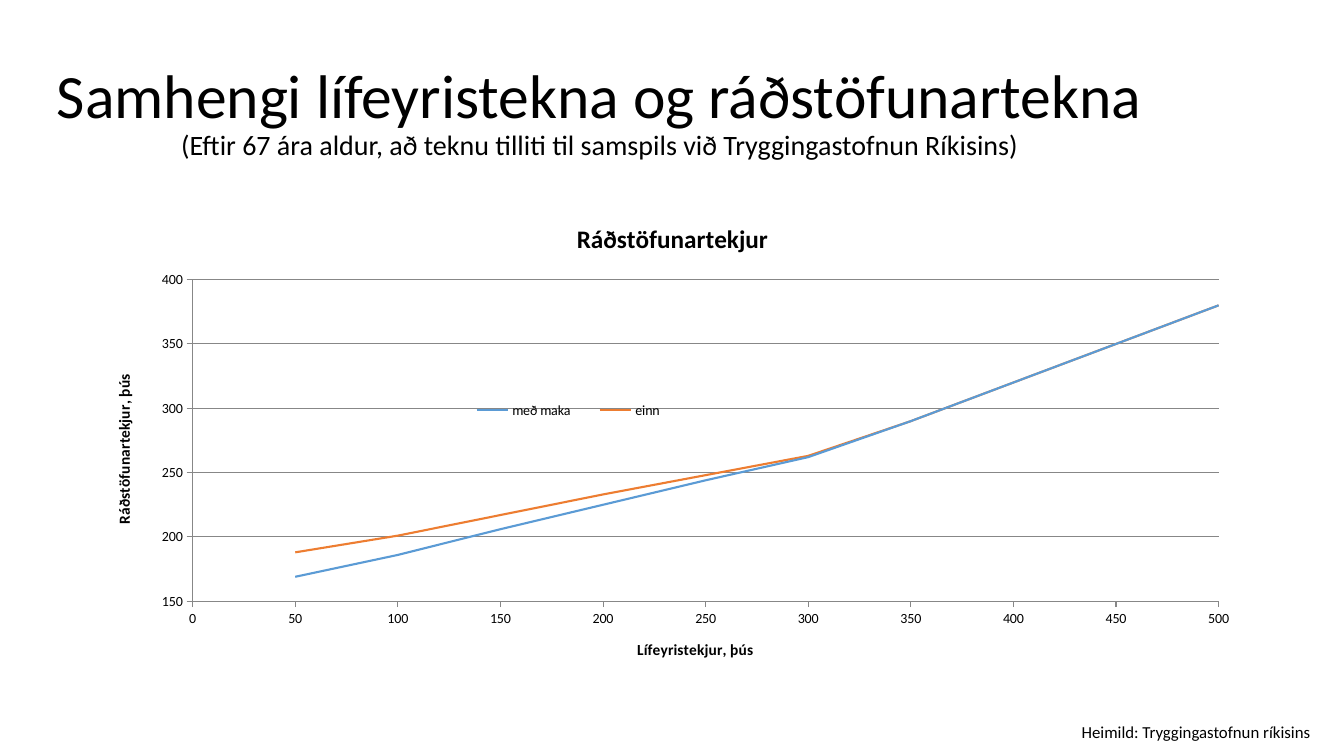
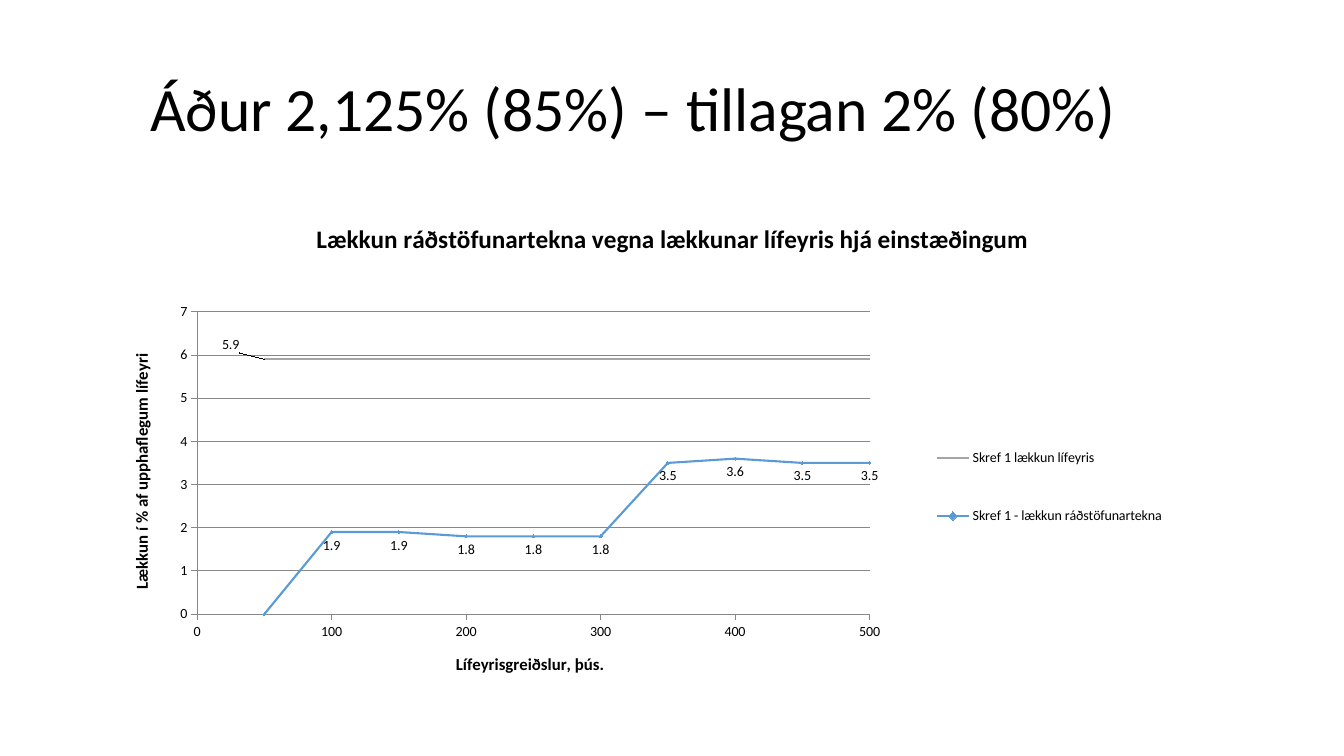
import dataclasses
import typing

import pptx
import pptx.chart.data
import pptx.chart.datalabel
import pptx.dml.color
import pptx.enum.chart
import pptx.enum.text
import pptx.oxml
import pptx.oxml.ns
import pptx.util

Inches, Pt = pptx.util.Inches, pptx.util.Pt
ink = pptx.dml.color.RGBColor.from_string
Legend = pptx.enum.chart.XL_LEGEND_POSITION
Label = pptx.enum.chart.XL_LABEL_POSITION
Mark = pptx.enum.chart.XL_MARKER_STYLE

# Shared style
FACE = "Calibri"
HEX = {"text": "000000", "grid": "878787", "blue": "5B9BD5",
       "orange": "ED7D31", "gray": "A5A5A5"}
TITLE = {"word_wrap": True,
         "auto_size": pptx.enum.text.MSO_AUTO_SIZE.NONE,
         "vertical_anchor": pptx.enum.text.MSO_ANCHOR.MIDDLE}
LINES = {"alignment": pptx.enum.text.PP_ALIGN.CENTER, "line_spacing": 0.9}
PENSION = range(50000, 500001, 50000)
THOUSANDS = "#,##0,"


@dataclasses.dataclass
class Line:
    name: str
    color: str
    values: list[float]
    marker: bool = False
    label: str = ""  # "first" or "rest" of the points


@dataclasses.dataclass
class Axis:
    title: str
    format: str
    limits: dict[str, float]


@dataclasses.dataclass
class Graph:
    title: str
    x: Axis
    y: Axis
    size: int
    lines: list[Line]
    side: typing.Any
    key: tuple[float, ...]
    over: bool = False
    plot: tuple[float, ...] = ()


@dataclasses.dataclass
class Page:
    title: str
    left: float
    top: float
    graph: Graph
    sub: str = ""
    source: str = ""


def put(item: typing.Any, form: dict[str, typing.Any]) -> None:
    for name, value in form.items():
        setattr(item, name, value)


def style(font: typing.Any, size: float, bold: bool = False) -> None:
    put(font, {"name": FACE, "size": Pt(size), "bold": bold})
    font.color.rgb = ink(HEX["text"])


def node(body: str) -> typing.Any:
    tag, rest = body[1:].split(">", 1)
    return pptx.oxml.parse_xml(f"<{tag} {pptx.oxml.ns.nsdecls('c')}>{rest}")


def layout(box: tuple[float, ...], inner: bool = False) -> typing.Any:
    """Manual layout as fractions of the chart: x, y, width, height."""
    parts = '<c:layoutTarget val="inner"/>' if inner else ""
    parts += '<c:xMode val="edge"/><c:yMode val="edge"/>'
    parts += "".join(f'<c:{n} val="{v}"/>' for n, v in zip("xywh", box))
    return node(f"<c:layout><c:manualLayout>{parts}</c:manualLayout></c:layout>")


def clear(item: typing.Any) -> None:
    for old in item.xpath("./c:layout"):
        item.remove(old)


def head(frame: typing.Any, text: str, size: float) -> None:
    frame.text = text
    style(frame.paragraphs[0].runs[0].font, size, True)


# Chart parts
def tune(axis: typing.Any, info: Axis, size: int, grid: bool) -> None:
    put(axis, {"has_major_gridlines": grid, "has_title": True,
               "major_tick_mark": pptx.enum.chart.XL_TICK_MARK.OUTSIDE,
               "minor_tick_mark": pptx.enum.chart.XL_TICK_MARK.NONE,
               **info.limits})
    put(axis.tick_labels, {"number_format": info.format,
                           "number_format_is_linked": False})
    head(axis.axis_title.text_frame, info.title, size)
    rules = [axis.format.line]
    if grid:
        rules.append(axis.major_gridlines.format.line)
    for rule in rules:
        rule.color.rgb = ink(HEX["grid"])
        rule.width = Pt(0.75)


def tag(series: typing.Any, label: str) -> None:
    rest = label == "rest"
    part = series._element.get_or_add_dLbls()
    labels = pptx.chart.datalabel.DataLabels(part)
    put(labels, {"show_value": rest, "number_format": "0.0",
                 "number_format_is_linked": False,
                 "position": Label.BELOW if rest else Label.RIGHT})
    style(labels.font, 10)
    if rest:
        body = '<c:delete val="1"/>'
    else:
        flags = "".join(f'<c:show{n} val="{int(n == "Val")}"/>' for n in
                        ("LegendKey", "Val", "CatName", "SerName",
                         "Percent", "BubbleSize"))
        body = ('<c:layout><c:manualLayout><c:x val="-0.04"/>'
                '<c:y val="-0.03"/></c:manualLayout></c:layout>'
                '<c:numFmt formatCode="0.0" sourceLinked="0"/>'
                f'<c:dLblPos val="r"/>{flags}')
    part.insert(0, node(f'<c:dLbl><c:idx val="0"/>{body}</c:dLbl>'))


def draw(slide: typing.Any, graph: Graph) -> None:
    data = pptx.chart.data.XyChartData()
    for line in graph.lines:
        row = data.add_series(line.name)
        for x, y in zip(PENSION, line.values):
            row.add_data_point(x, y)
    kind = pptx.enum.chart.XL_CHART_TYPE.XY_SCATTER_LINES_NO_MARKERS
    chart = slide.shapes.add_chart(kind, Inches(0.92), Inches(2), Inches(11.5),
                                   Inches(4.76), data).chart
    style(chart.font, 10)
    put(chart, {"has_title": True, "has_legend": True})
    head(chart.chart_title.text_frame, graph.title, 18)
    chart.plots[0].vary_by_categories = False
    tune(chart.category_axis, graph.x, graph.size, False)
    tune(chart.value_axis, graph.y, graph.size, True)

    # Legend and plot area
    put(chart.legend, {"position": graph.side, "include_in_layout": graph.over})
    key = chart.legend._element
    clear(key)
    key.xpath("./c:legendPos")[0].addnext(layout(graph.key))
    if graph.plot:
        area = chart._chartSpace.xpath("./c:chart/c:plotArea")[0]
        clear(area)
        area.insert(0, layout(graph.plot, True))

    # Series
    for line, series in zip(graph.lines, chart.plots[0].series):
        color = ink(HEX[line.color])
        series._element.get_or_add_smooth().val = False
        series.format.line.color.rgb = color
        series.format.line.width = Pt(1.5)
        series.marker.style = Mark.DIAMOND if line.marker else Mark.NONE
        if line.marker:
            series.marker.size = 2
            series.marker.format.fill.solid()
            series.marker.format.fill.fore_color.rgb = color
            series.marker.format.line.color.rgb = color
        if line.label:
            tag(series, line.label)


# Slide parts
def build(deck: typing.Any, page: Page) -> None:
    slide = deck.slides.add_slide(deck.slide_layouts[5])
    title = slide.shapes.title
    put(title, {"left": Inches(page.left), "top": Inches(page.top),
                "width": Inches(11.5), "height": Inches(1.45)})
    put(title.text_frame, TITLE)
    para = title.text_frame.paragraphs[0]
    put(para, LINES)
    run = para.add_run()
    run.text = page.title
    style(run.font, 44)
    if page.sub:
        para.add_line_break()
        run = para.add_run()
        run.text = page.sub
        style(run.font, 20)
    draw(slide, page.graph)
    if page.source:
        note = slide.shapes.add_textbox(Inches(10.63), Inches(7.11),
                                        Inches(2.57), Inches(0.3)).text_frame
        note.word_wrap = True
        note.text = page.source
        style(note.paragraphs[0].runs[0].font, 12)


# Content
SPAN = {"minimum_scale": 0, "maximum_scale": 500000}
INCOME = Graph(
    "Ráðstöfunartekjur",
    Axis("Lífeyristekjur, þús", THOUSANDS, SPAN),
    Axis("Ráðstöfunartekjur, þús", THOUSANDS, {"minimum_scale": 150000}),
    11,
    [Line("með maka", "blue", [169000, 186000, 206000, 225000, 244000,
                               262000, 290000, 320000, 350000, 380000]),
     Line("einn", "orange", [188000, 201000, 217000, 233000, 248000,
                             263000, 290000, 320000, 350000, 380000])],
    Legend.LEFT, (0.31, 0.4, 0.2, 0.07), over=True)
CUT = Graph(
    "Lækkun ráðstöfunartekna vegna lækkunar lífeyris hjá einstæðingum",
    Axis("Lífeyrisgreiðslur, þús.", THOUSANDS, {**SPAN, "major_unit": 100000}),
    Axis("Lækkun í % af upphaflegum lífeyri", "0", {}),
    12,
    [Line("Skref 1 lækkun lífeyris", "gray", [5.9] * 10, label="first"),
     Line("Skref 1 - lækkun ráðstöfunartekna", "blue",
          [0, 1.9, 1.9, 1.8, 1.8, 1.8, 3.5, 3.6, 3.5, 3.5], True, "rest")],
    Legend.RIGHT, (0.71, 0.43, 0.23, 0.33), plot=(0.09, 0.23, 0.58, 0.63))
PAGES = [
    Page("Samhengi lífeyristekna og ráðstöfunartekna", 0.2, 0.4, INCOME,
         "(Eftir 67 ára aldur, að teknu tilliti til samspils við "
         "Tryggingastofnun Ríkisins)",
         "Heimild: Tryggingastofnun ríkisins"),
    Page("Áður 2,125% (85%) – tillagan 2% (80%)", 0.53, 0.38, CUT),
]


def main() -> None:
    deck = pptx.Presentation()
    put(deck, {"slide_width": Inches(13.33), "slide_height": Inches(7.5)})
    for page in PAGES:
        build(deck, page)
    deck.save("out.pptx")


if __name__ == "__main__":
    main()
